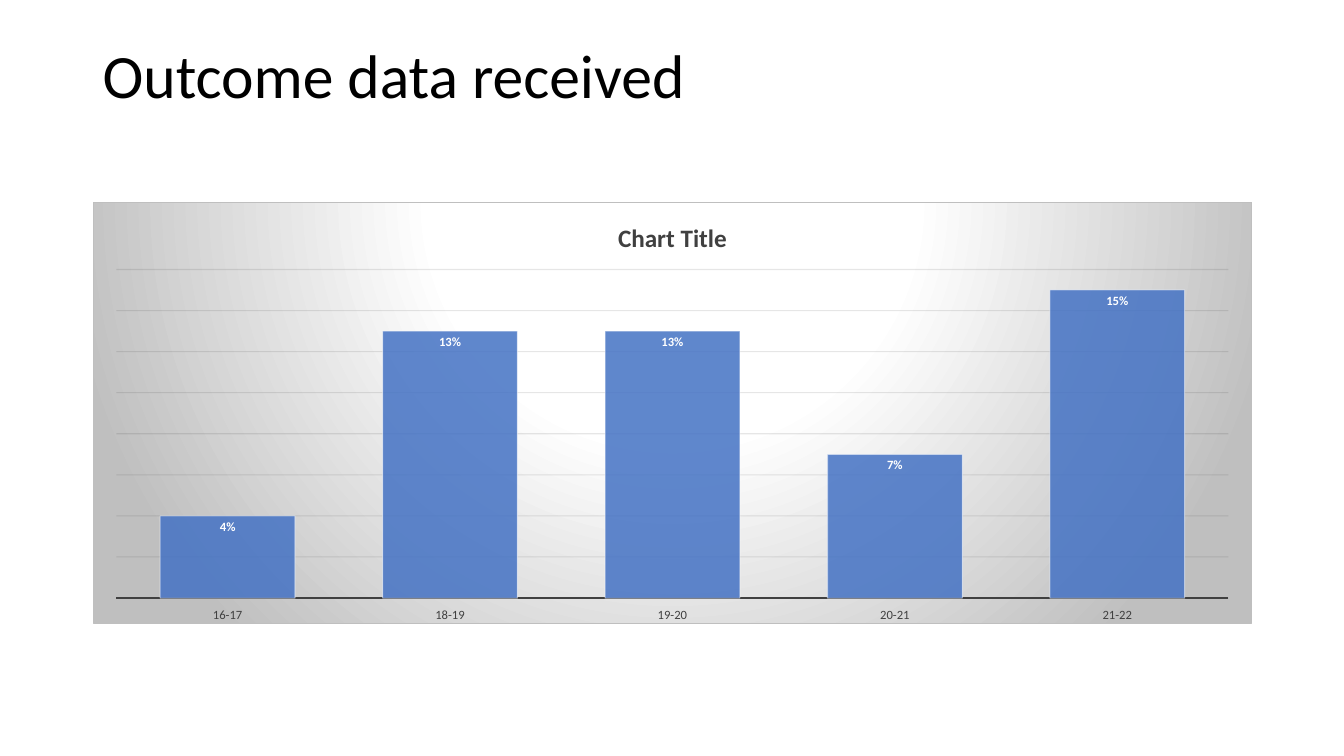
from lxml import etree
from pptx import Presentation
from pptx.chart.data import CategoryChartData
from pptx.dml.color import RGBColor
from pptx.enum.chart import (XL_CHART_TYPE as ChartType, XL_LABEL_POSITION as LabelPosition,
                             XL_TICK_LABEL_POSITION as TickLabels, XL_TICK_MARK as TickMark)
from pptx.enum.text import MSO_ANCHOR as Anchor
from pptx.oxml import parse_xml
from pptx.oxml.ns import nsdecls, qn
from pptx.util import Inches, Pt

BLACK = RGBColor(0x00, 0x00, 0x00)
WHITE = RGBColor(0xFF, 0xFF, 0xFF)
DARK_GREY = RGBColor(0x40, 0x40, 0x40)
GRID = RGBColor(0x0D, 0x0D, 0x0D)
SILVER = RGBColor(0xBF, 0xBF, 0xBF)
BLUE = RGBColor(0x44, 0x72, 0xC4)

YEARS = ["16-17", "18-19", "19-20", "20-21", "21-22"]
SHARES = [0.04, 0.13, 0.13, 0.07, 0.15]


def style_font(font, size, color, bold=False):
    for name, value in {"name": "Calibri", "size": Pt(size), "bold": bold}.items():
        setattr(font, name, value)
    font.color.rgb = color


def style_line(line, color, width, opacity=100):
    line.color.rgb = color
    line.width = Pt(width)
    set_opacity(line.fill, color, opacity, line)


def set_opacity(fill, color, percent, owner=None):
    """Paint a fill in one colour and make it partly transparent."""
    fill.solid()
    fill.fore_color.rgb = color
    if percent < 100:
        tag = fill._xPr.find(".//" + qn("a:srgbClr"))
        etree.SubElement(tag, qn("a:alpha")).set("val", str(percent * 1000))


def add_title(page, left, top, width, height):
    box = page.shapes.add_textbox(left, top, width, height)
    frame = box.text_frame
    for name, value in {"word_wrap": True, "vertical_anchor": Anchor.TOP}.items():
        setattr(frame, name, value)
    para = frame.paragraphs[0]
    para.line_spacing = 0.9
    span = para.add_run()
    span.text = "Outcome data received"
    style_font(span.font, 44, BLACK)


def add_backdrop(chart):
    """Give the chart area a radial gradient and a thin border."""
    stops = "".join(f'<a:gs pos="{place * 1000}"><a:srgbClr val="{color}"/></a:gs>'
                    for place, color in [(0, WHITE), (39, WHITE), (100, SILVER)])
    backdrop = parse_xml(
        f'<c:spPr {nsdecls("c", "a")}><a:gradFill><a:gsLst>{stops}</a:gsLst>'
        '<a:path path="circle"><a:fillToRect l="50000" t="-80000" r="50000" b="180000"/></a:path>'
        f'</a:gradFill><a:ln w="{Pt(0.75)}"><a:solidFill><a:srgbClr val="{SILVER}"/></a:solidFill>'
        '</a:ln></c:spPr>')
    chart._chartSpace.find(qn("c:txPr")).addprevious(backdrop)


def place_plot(chart, **shares):
    """Fix the inner plot area as shares of the chart area."""
    plot_area = chart._chartSpace.find(".//" + qn("c:plotArea"))
    for layout in plot_area.findall(qn("c:layout")):
        plot_area.remove(layout)
    sizes = "".join(f'<c:{name} val="{share}"/>' for name, share in shares.items())
    plot_area.insert(0, parse_xml(
        f'<c:layout {nsdecls("c")}><c:manualLayout><c:layoutTarget val="inner"/>'
        f'<c:xMode val="edge"/><c:yMode val="edge"/>{sizes}</c:manualLayout></c:layout>'))


def add_outcome_chart(page, left, top, width, height):
    data = CategoryChartData(number_format="0%")
    data.categories = YEARS
    data.add_series("Series 1", SHARES)
    chart = page.shapes.add_chart(ChartType.COLUMN_CLUSTERED, left, top, width, height, data).chart
    style_font(chart.font, 10, BLACK)
    chart.has_legend = False
    add_backdrop(chart)
    place_plot(chart, x=0.02, y=0.16, w=0.96, h=0.78)

    # Chart heading
    chart.has_title = True
    span = chart.chart_title.text_frame.paragraphs[0].add_run()
    span.text = "Chart Title"
    style_font(span.font, 18, DARK_GREY, bold=True)

    # Axes
    years = chart.category_axis
    years.major_tick_mark = TickMark.NONE
    years.tick_label_position = TickLabels.LOW
    style_font(years.tick_labels.font, 9, DARK_GREY)
    style_line(years.format.line, DARK_GREY, 1.5)
    shares = chart.value_axis
    for name, value in {"visible": False, "minimum_scale": 0, "maximum_scale": 0.16,
                        "major_unit": 0.02, "has_major_gridlines": True}.items():
        setattr(shares, name, value)
    style_line(shares.major_gridlines.format.line, GRID, 0.75, opacity=10)

    # Columns and their labels
    plot = chart.plots[0]
    plot.gap_width = 65
    plot.vary_by_categories = False
    columns = plot.series[0]
    set_opacity(columns.format.fill, BLUE, 85)
    style_line(columns.format.line, WHITE, 0.75, opacity=50)
    labels = columns.data_labels
    for name, value in {"show_value": True, "position": LabelPosition.INSIDE_END,
                        "number_format": "0%", "number_format_is_linked": False}.items():
        setattr(labels, name, value)
    style_font(labels.font, 9, WHITE, bold=True)


def main():
    deck = Presentation()
    deck.slide_width, deck.slide_height = Inches(13.33), Inches(7.5)
    page = deck.slides.add_slide(deck.slide_layouts[6])
    left, width = Inches(0.92), Inches(11.5)
    add_title(page, left, Inches(0.4), width, Inches(1.45))
    add_outcome_chart(page, left, Inches(2), width, Inches(4.19))
    deck.save("out.pptx")


if __name__ == "__main__":
    main()
